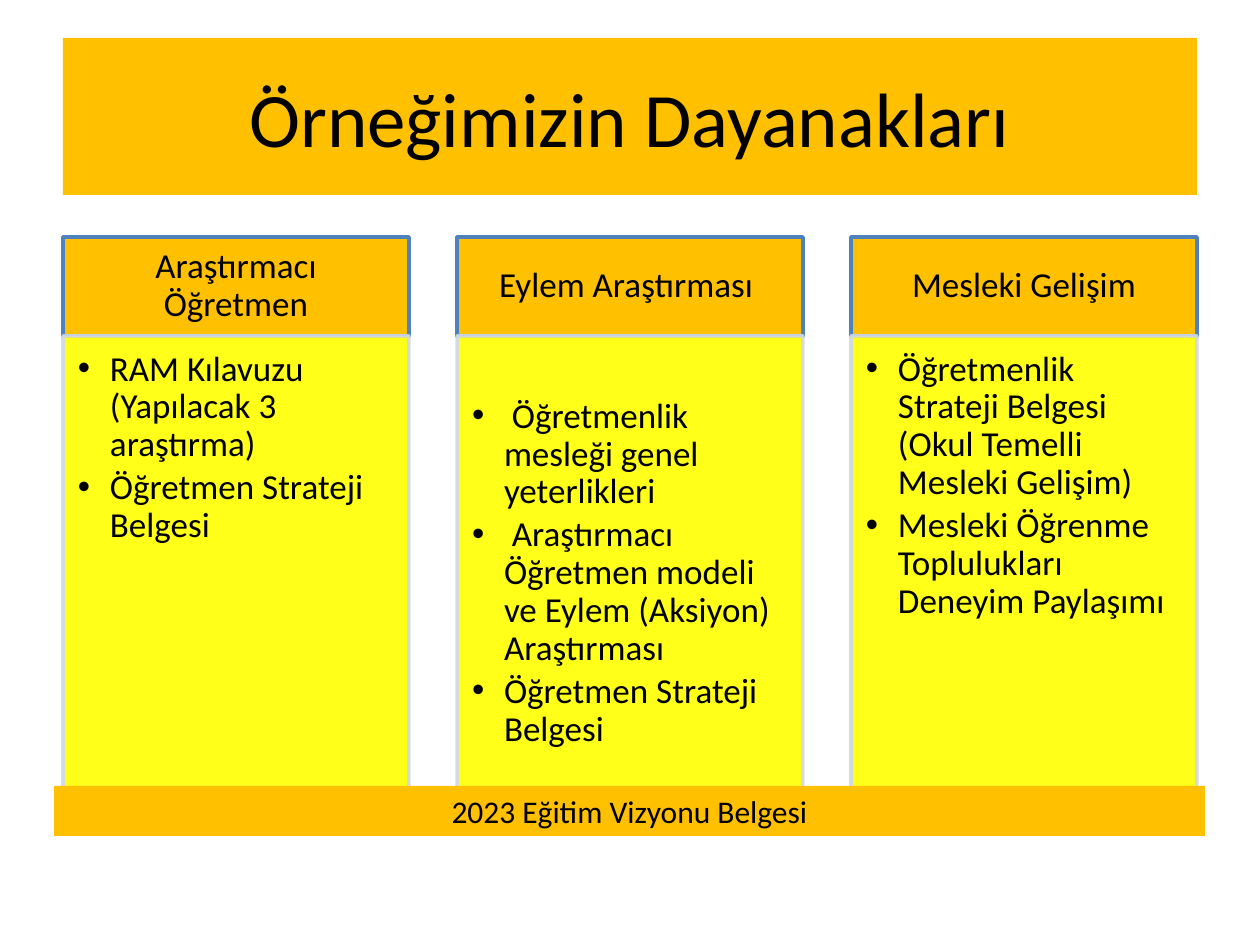
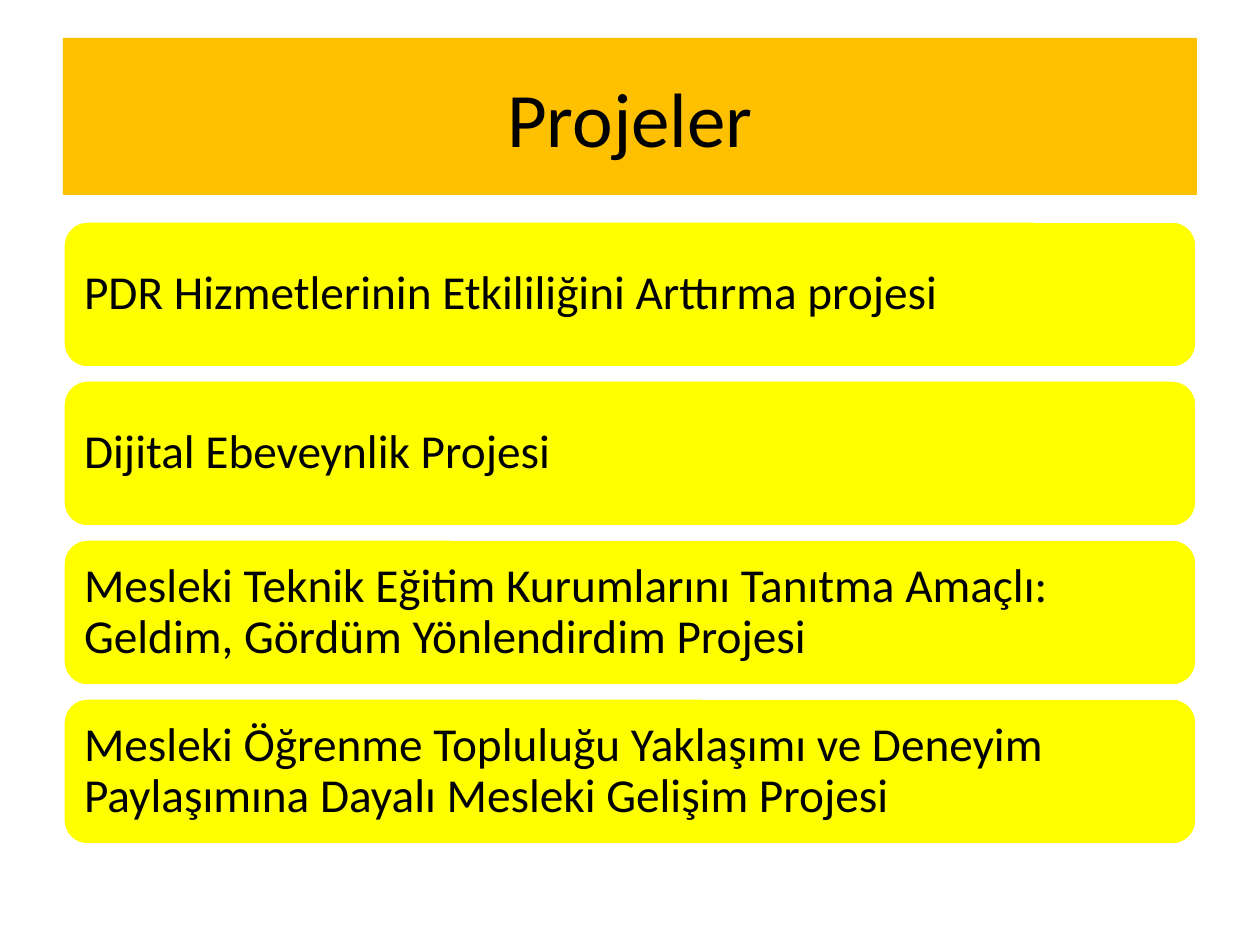
from lxml import etree
from pptx import Presentation
from pptx.dml.color import RGBColor
from pptx.enum.shapes import MSO_SHAPE
from pptx.enum.text import MSO_ANCHOR, PP_ALIGN
from pptx.oxml.ns import qn
from pptx.util import Emu, Pt

# Content
BASES_TITLE = "Örneğimizin Dayanakları"
BASES = [  # heading, extra space above the list, points
    ("Araştırmacı Öğretmen", 0,
     ["RAM Kılavuzu (Yapılacak 3 araştırma)", "Öğretmen Strateji Belgesi"]),
    ("Eylem Araştırması ", 47,
     [" Öğretmenlik mesleği genel yeterlikleri",
      " Araştırmacı Öğretmen modeli ve Eylem (Aksiyon) Araştırması",
      "Öğretmen Strateji Belgesi"]),
    ("Mesleki Gelişim", 0,
     ["Öğretmenlik Strateji Belgesi (Okul Temelli Mesleki Gelişim)",
      "Mesleki Öğrenme Toplulukları Deneyim Paylaşımı"]),
]
VISION = "2023 Eğitim Vizyonu Belgesi"
PROJECTS_TITLE = "Projeler"
PROJECTS = [
    "PDR Hizmetlerinin Etkililiğini Arttırma projesi",
    "Dijital Ebeveynlik Projesi",
    "Mesleki Teknik Eğitim Kurumlarını Tanıtma Amaçlı: Geldim, Gördüm Yönlendirdim Projesi",
    "Mesleki Öğrenme Topluluğu Yaklaşımı ve Deneyim Paylaşımına Dayalı Mesleki Gelişim Projesi",
]

# Shared style
FONT = "Calibri"
AMBER = RGBColor(0xFF, 0xC0, 0x00)
YELLOW = RGBColor(0xFF, 0xFF, 0x00)
BLUE = RGBColor(0x4F, 0x81, 0xBD)
PALE_BLUE = RGBColor(0xD0, 0xD8, 0xE8)
WHITE = RGBColor(0xFF, 0xFF, 0xFF)
BLACK = RGBColor(0x00, 0x00, 0x00)
RECT, ROUNDED = MSO_SHAPE.RECTANGLE, MSO_SHAPE.ROUNDED_RECTANGLE
LEFT, CENTER = PP_ALIGN.LEFT, PP_ALIGN.CENTER
TOP, MIDDLE = MSO_ANCHOR.TOP, MSO_ANCHOR.MIDDLE

# Layout in px
PX_PER_INCH = 126
SLIDE_W, SLIDE_H = 1260, 945
MARGIN = 63
CONTENT_W = SLIDE_W - 2 * MARGIN
TITLE_TOP, TITLE_H = 38, 157
COLUMN_W, HEADING_TOP, HEADING_H, LIST_H = 346, 237, 99, 492
VISION_BOX = (54, 786, 1151, 50)
PROJECT_TOP, PROJECT_H, PROJECT_PITCH = 221, 147, 159
BULLET_INDENT = 32


def px(length):
    return Emu(round(length * 914400 / PX_PER_INCH))


def set_opacity(color_format_parent, percent):
    for color in color_format_parent.iter(qn("a:srgbClr")):
        etree.SubElement(color, qn("a:alpha"), val=str(percent * 1000))


def add_bullet(paragraph):
    props = paragraph._p.get_or_add_pPr()
    props.set("marL", str(px(BULLET_INDENT)))
    props.set("indent", str(-px(BULLET_INDENT)))
    etree.SubElement(props, qn("a:buFont"), typeface="Arial")
    etree.SubElement(props, qn("a:buChar"), char="•")


def add_panel(slide, box, lines, size, fill=AMBER, border=None, kind=RECT,
              align=CENTER, anchor=MIDDLE, insets=(12, 6, 12, 6),
              spacing=None, after=0):
    panel = slide.shapes.add_shape(kind, *map(px, box))
    panel.shadow.inherit = False
    panel.fill.solid()
    panel.fill.fore_color.rgb = fill
    if border is None:
        panel.line.fill.background()
    else:
        panel.line.color.rgb = border
        panel.line.width = Pt(2)

    frame = panel.text_frame
    frame.word_wrap = True
    frame.vertical_anchor = anchor
    (frame.margin_left, frame.margin_top,
     frame.margin_right, frame.margin_bottom) = map(px, insets)
    frame.text = "\n".join(lines)
    for paragraph in frame.paragraphs:
        paragraph.alignment = align
        paragraph.line_spacing = spacing
        paragraph.space_after = Pt(after)
        for run in paragraph.runs:
            run.font.name = FONT
            run.font.size = Pt(size)
            run.font.color.rgb = BLACK
    return panel


def add_titled_slide(prs, title):
    slide = prs.slides.add_slide(prs.slide_layouts[6])
    add_panel(slide, (MARGIN, TITLE_TOP, CONTENT_W, TITLE_H), [title], 44)
    return slide


def build_bases(prs):
    slide = add_titled_slide(prs, BASES_TITLE)
    pitch = (CONTENT_W - COLUMN_W) / (len(BASES) - 1)
    for i, (heading, space_above, points) in enumerate(BASES):
        left = MARGIN + i * pitch
        add_panel(slide, (left, HEADING_TOP, COLUMN_W, HEADING_H), [heading], 20,
                  border=BLUE, insets=(20, 11, 20, 11), spacing=0.9)
        point_list = add_panel(
            slide, (left, HEADING_TOP + HEADING_H, COLUMN_W, LIST_H), points, 20,
            fill=YELLOW, border=PALE_BLUE, align=LEFT, anchor=TOP,
            insets=(15, 15 + space_above, 20, 21), spacing=0.9, after=3)
        set_opacity(point_list._element.spPr, 90)
        for paragraph in point_list.text_frame.paragraphs:
            add_bullet(paragraph)
    # Band across the foot of the columns
    add_panel(slide, VISION_BOX, [VISION], 18)


def build_projects(prs):
    slide = add_titled_slide(prs, PROJECTS_TITLE)
    for i, project in enumerate(PROJECTS):
        add_panel(slide, (MARGIN, PROJECT_TOP + i * PROJECT_PITCH, CONTENT_W, PROJECT_H),
                  [project], 27, fill=YELLOW, border=WHITE, kind=ROUNDED,
                  align=LEFT, insets=(14, 14, 14, 14), spacing=0.9)


def main():
    prs = Presentation()
    prs.slide_width, prs.slide_height = px(SLIDE_W), px(SLIDE_H)
    build_bases(prs)
    build_projects(prs)
    prs.save("out.pptx")


if __name__ == "__main__":
    main()
